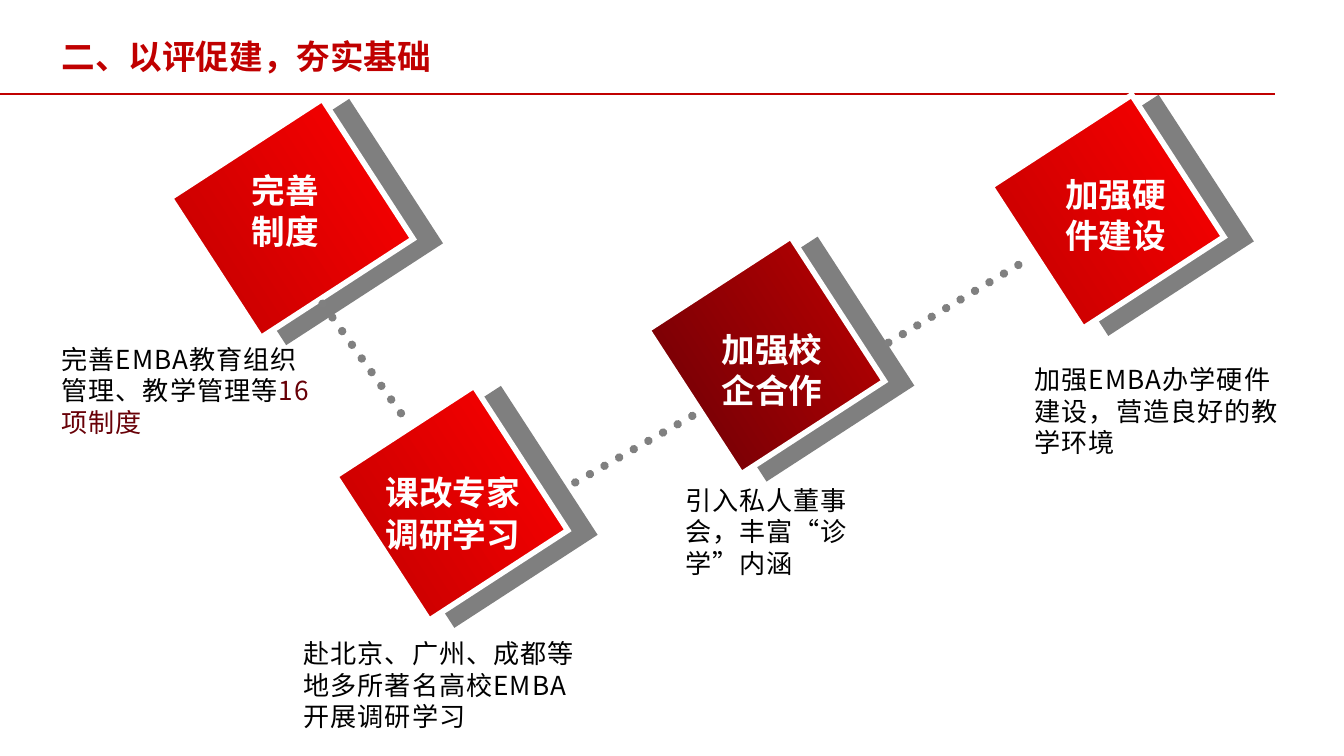
from lxml import etree
from pptx import Presentation
from pptx.dml.color import RGBColor
from pptx.enum.dml import MSO_LINE
from pptx.enum.shapes import MSO_CONNECTOR, MSO_SHAPE
from pptx.enum.text import MSO_AUTO_SIZE, PP_ALIGN
from pptx.oxml import parse_xml
from pptx.oxml.ns import nsdecls, qn
from pptx.util import Inches, Pt

COLORS = {"bright": "FF0000", "red": "C00000", "maroon": "680007",
          "gray": "808080", "white": "FFFFFF", "black": "000000"}
RGB = {name: RGBColor.from_string(value) for name, value in COLORS.items()}
CJK_FONT = "Noto Sans CJK SC"


def add_text(shapes, place, paragraphs, size, font, bold=False,
             align=PP_ALIGN.LEFT, wrap=False, spacing=0, right_inset=0.1):
    """Each paragraph is a list of (text, color name) runs."""
    box = shapes.add_textbox(*map(Inches, place))
    frame = box.text_frame
    frame.word_wrap = wrap
    frame.auto_size = MSO_AUTO_SIZE.SHAPE_TO_FIT_TEXT
    frame.margin_right = Inches(right_inset)
    for index, runs in enumerate(paragraphs):
        para = frame.add_paragraph() if index else frame.paragraphs[0]
        para.alignment = align
        para.line_spacing = Pt(round(size * 1.22))
        for text, color in runs:
            span = para.add_run()
            span.text = text
            span.font.size = Pt(size)
            span.font.bold = bold
            span.font.name = font
            span.font.color.rgb = RGB[color]
            props = span.font._element
            props.set("spc", str(round(spacing * 100)))
            etree.SubElement(props, qn("a:ea")).set("typeface", font)


def add_line(start, end, color, width):
    line = page.shapes.add_connector(
        MSO_CONNECTOR.STRAIGHT, *map(Inches, (*start, *end)))
    line.line.color.rgb = RGB[color]
    line.line.width = Pt(width)
    etree.SubElement(line._element.spPr, qn("a:effectLst"))
    return line


# Widescreen page, 16:9
deck = Presentation()
deck.slide_width, deck.slide_height = Inches(10), Inches(10 * 9 / 16)
page = deck.slides.add_slide(deck.slide_layouts[6])

# Header rule
add_line((0, 0.7), (9.49, 0.7), "red", 0.75)

# Tilted squares with their labels
steps = [
    ((1.55, 0.95, 1.24, 1.35), ("bright", "red"),
     (1.54, 1.21, 1.17, 1.16), ("完善", "制度")),
    ((2.72, 3.13, 1.28, 1.23), ("bright", "red"),
     (2.76, 3.46, 1.22, 0.71), ("课改专家", "调研学习")),
    ((5.06, 2.01, 1.28, 1.27), ("red", "maroon"),
     (5.26, 2.39, 0.97, 0.71), ("加强校", "企合作")),
    ((7.61, 0.95, 1.26, 1.25), ("bright", "red"),
     (7.82, 1.24, 0.96, 0.71), ("加强硬", "件建设")),
]
for place, gradient, label_place, label in steps:
    group = page.shapes.add_group_shape()
    square = group.shapes.add_shape(MSO_SHAPE.RECTANGLE, *map(Inches, place))
    square.rotation = 57
    square.fill.gradient()
    square.fill.gradient_angle = 270
    for stop, position, color in zip(square.fill.gradient_stops, (0, 1), gradient):
        stop.position = position
        stop.color.rgb = RGB[color]
    square.line.color.rgb = RGB["white"]
    square.line.width = Pt(3)
    outline = square._element.spPr.find(qn("a:ln"))
    etree.SubElement(outline, qn("a:miter")).set("lim", "800000")
    square.shadow.inherit = False
    square._element.spPr.find(qn("a:effectLst")).append(parse_xml(
        f'<a:outerShdw {nsdecls("a")} blurRad="0" dist="{Pt(14.1)}" '
        f'dir="{8 * 60000}" algn="ctr" rotWithShape="0">'
        f'<a:srgbClr val="{COLORS["black"]}"><a:alpha val="50000"/></a:srgbClr>'
        '</a:outerShdw>'))
    add_text(group.shapes, label_place, [[(text, "white")] for text in label],
             18, "Calibri", bold=True, align=PP_ALIGN.CENTER)

# Dotted links between the squares
for start, end in [((2.4, 2.26), (3.03, 3.14)),
                   ((4.28, 3.59), (5.16, 3.09)),
                   ((6.61, 2.55), (7.68, 1.91))]:
    link = add_line(start, end, "gray", 4.5)
    link.line.dash_style = MSO_LINE.ROUND_DOT
    link._element.spPr.find(qn("a:ln")).set("cap", "rnd")

# Descriptions: place, right inset, runs
notes = [
    ((0.36, 2.5, 2.04, 0.81), 0.1,
     [("完善EMBA教育组织管理、教学管理等", "black"), ("16项制度", "maroon")]),
    ((2.16, 4.69, 2.42, 0.81), 0.2,
     [("赴北京、广州、成都等地多所著名高校EMBA开展调研学习", "black")]),
    ((5, 3.55, 1.81, 0.57), 0.35,
     [("引入私人董事会，丰富“诊学”内涵", "black")]),
    ((7.6, 2.65, 2.04, 0.81), 0.1,
     [("加强EMBA办学硬件建设，营造良好的教学环境", "black")]),
]
for place, inset, runs in notes:
    add_text(page.shapes, place, [runs], 14, CJK_FONT, wrap=True,
             spacing=0.5, right_inset=inset)

# Title
add_text(page.shapes, (0.36, 0.21, 2.98, 0.71),
         [[("二、以评促建，夯实基础", "red")]], 18, CJK_FONT, bold=True)

deck.save("out.pptx")
